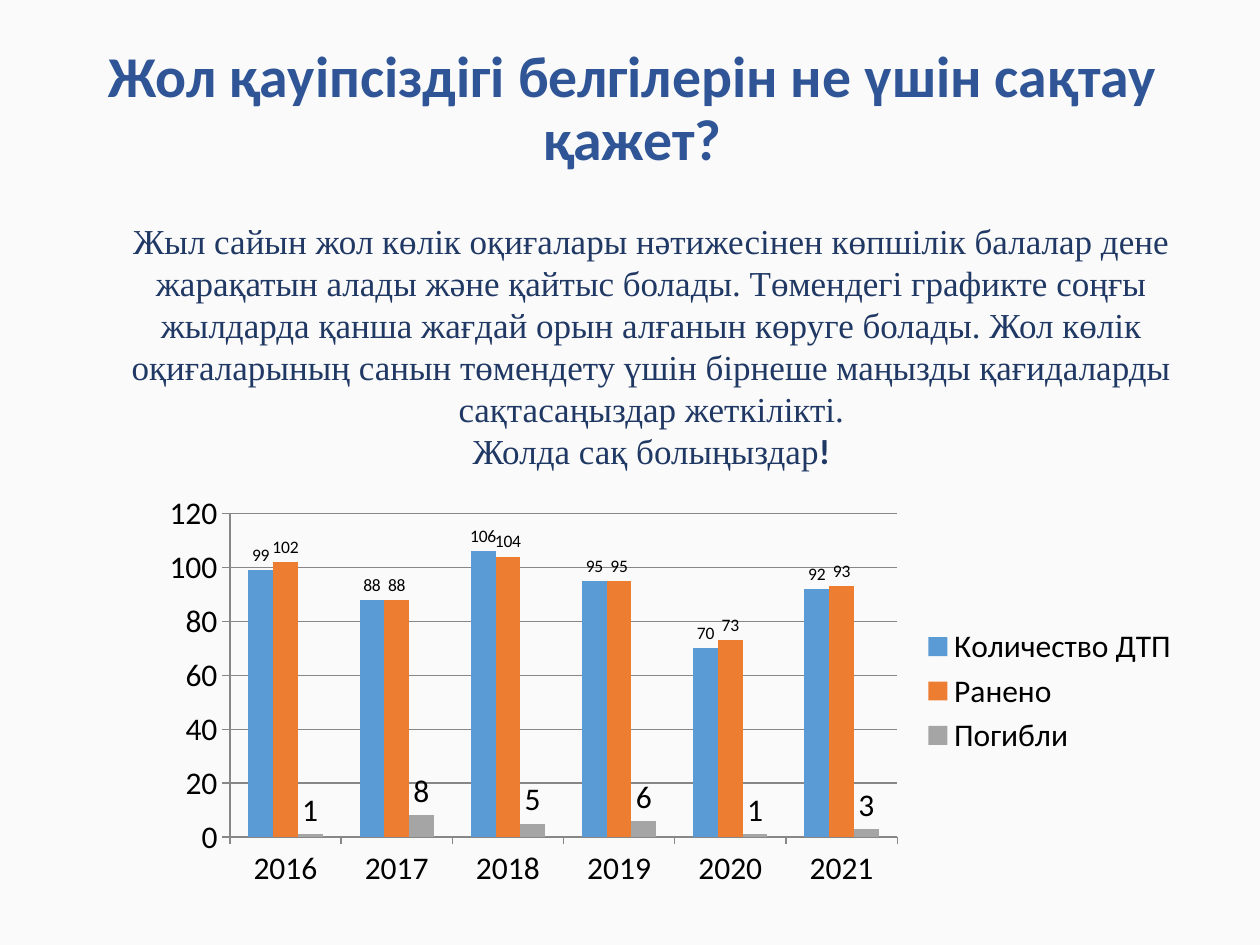
from pptx import Presentation, util as u
from pptx.chart import data
from pptx.dml import color
from pptx.enum import chart as ce, text

Inches = u.Inches
THEME = {
    "back": "FAFAFA", "title": "2F5597", "body": "203864",
    "chart": "000000", "grid": "878787",
    "bars": ["5B9BD5", "ED7D31", "A5A5A5"],
    "sans": "Calibri", "serif": "Times New Roman",
    "title_size": 33, "body_size": 20, "chart_size": 18, "label_size": 10,
}


def rgb(value):
    return color.RGBColor.from_string(value)


def add_text(p, content, *, size, font, colour, bold=False, spacing=1.0):
    p.alignment = text.PP_ALIGN.CENTER
    p.line_spacing = spacing
    r = p.add_run()
    r.text = content
    r.font.size = u.Pt(size)
    r.font.name = font
    r.font.bold = bold
    r.font.color.rgb = rgb(colour)


prs = Presentation()
prs.slide_width, prs.slide_height = Inches(10), Inches(7.5)
s = prs.slides.add_slide(prs.slide_layouts[5])
s.background.fill.solid()
s.background.fill.fore_color.rgb = rgb(THEME["back"])

title = s.shapes.title
title.left, title.top = Inches(0.71), Inches(0.15)
title.width, title.height = Inches(8.62), Inches(1.45)
tf = title.text_frame
tf.word_wrap = True
tf.auto_size = text.MSO_AUTO_SIZE.NONE
tf.vertical_anchor = text.MSO_ANCHOR.MIDDLE
add_text(tf.paragraphs[0], "Жол қауіпсіздігі белгілерін не үшін сақтау қажет?",
         size=THEME["title_size"], font=THEME["sans"], colour=THEME["title"],
         bold=True, spacing=0.9)

accidents = data.CategoryChartData()
accidents.categories = ["2016", "2017", "2018", "2019", "2020", "2021"]
accidents.add_series("Количество ДТП", [99, 88, 106, 95, 70, 92])
accidents.add_series("Ранено", [102, 88, 104, 95, 73, 93])
accidents.add_series("Погибли", [1, 8, 5, 6, 1, 3])
chart = s.shapes.add_chart(ce.XL_CHART_TYPE.COLUMN_CLUSTERED, Inches(1.18), Inches(3.86),
                           Inches(8.28), Inches(3.25), accidents).chart
chart.has_title = False
chart.font.size = u.Pt(THEME["chart_size"])
chart.font.name = THEME["sans"]
chart.font.color.rgb = rgb(THEME["chart"])
chart.has_legend = True
chart.legend.position = ce.XL_LEGEND_POSITION.RIGHT
chart.legend.include_in_layout = False

value_axis = chart.value_axis
value_axis.minimum_scale, value_axis.maximum_scale = 0, 120
value_axis.major_unit = 20
value_axis.has_major_gridlines = True
for axis in (chart.category_axis, value_axis):
    axis.major_tick_mark = ce.XL_TICK_MARK.OUTSIDE
    axis.minor_tick_mark = ce.XL_TICK_MARK.NONE
for line in (chart.category_axis.format.line, value_axis.format.line,
             value_axis.major_gridlines.format.line):
    line.color.rgb = rgb(THEME["grid"])
    line.width = u.Pt(0.75)

plot = chart.plots[0]
plot.gap_width, plot.overlap = 150, 0
plot.vary_by_categories = False
label_sizes = [THEME["label_size"], THEME["label_size"], THEME["chart_size"]]
for series, fill, size in zip(plot.series, THEME["bars"], label_sizes):
    series.format.fill.solid()
    series.format.fill.fore_color.rgb = rgb(fill)
    series.invert_if_negative = False
    labels = series.data_labels
    labels.show_value = True
    labels.position = ce.XL_LABEL_POSITION.OUTSIDE_END
    labels.font.size = u.Pt(size)
    labels.font.name = THEME["sans"]
    labels.font.color.rgb = rgb(THEME["chart"])

tf = s.shapes.add_textbox(Inches(0.81), Inches(1.69), Inches(8.72), Inches(2.12)).text_frame
tf.word_wrap = True
tf.auto_size = text.MSO_AUTO_SIZE.SHAPE_TO_FIT_TEXT
body = {"size": THEME["body_size"], "colour": THEME["body"]}
add_text(tf.paragraphs[0],
         "Жыл сайын жол көлік оқиғалары нәтижесінен көпшілік балалар дене жарақатын алады "
         "және қайтыс болады. Төмендегі графикте соңғы жылдарда қанша жағдай орын алғанын "
         "көруге болады. Жол көлік оқиғаларының санын төмендету үшін бірнеше маңызды "
         "қағидаларды сақтасаңыздар жеткілікті.", font=THEME["serif"], **body)
p = tf.add_paragraph()
add_text(p, "Жолда сақ болыңыздар", font=THEME["serif"], **body)
add_text(p, "!", font=THEME["sans"], bold=True, **body)

prs.save("out.pptx")
